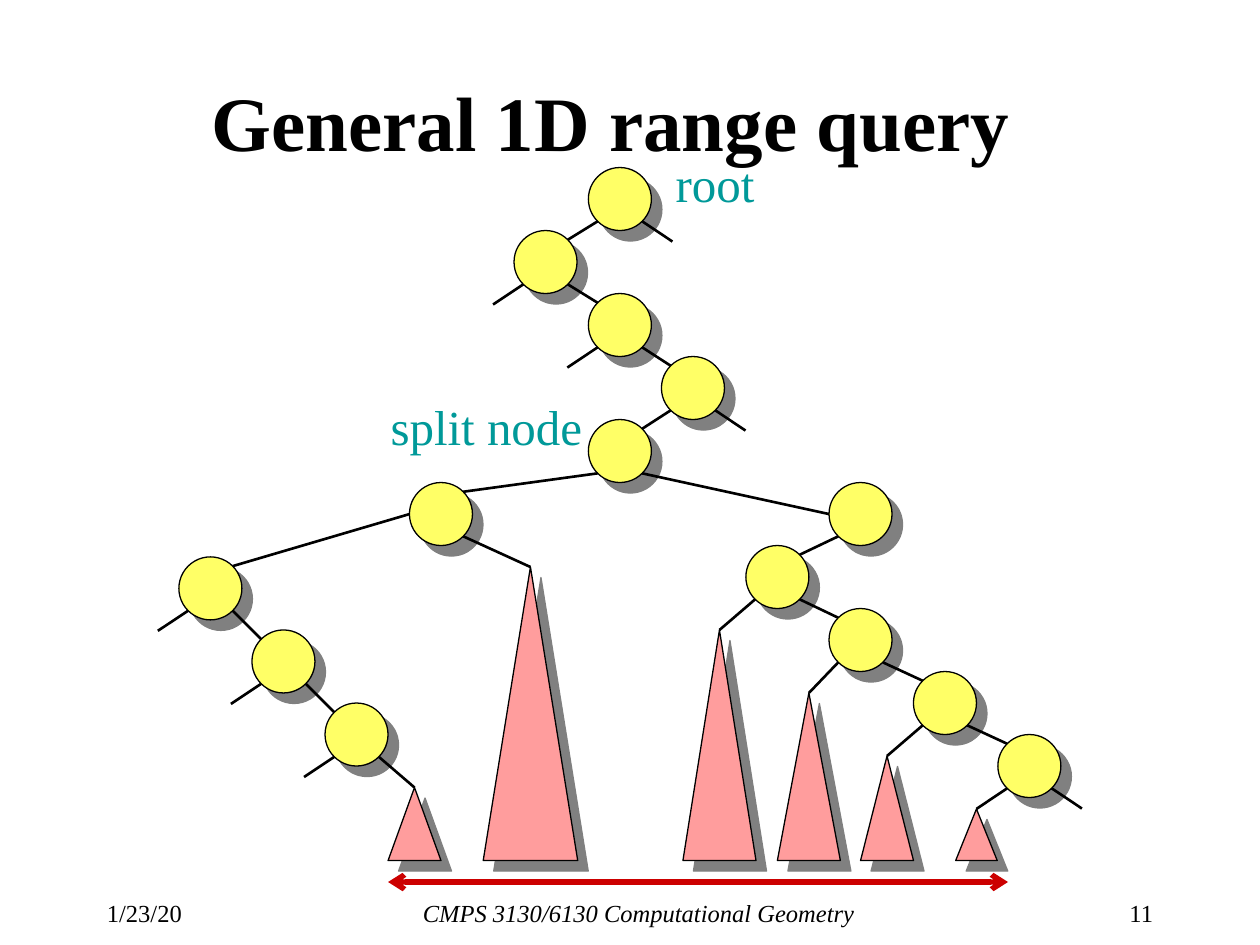
from lxml.etree import SubElement
from pptx import Presentation
from pptx.dml.color import RGBColor
from pptx.enum.shapes import MSO_CONNECTOR, MSO_SHAPE
from pptx.enum.text import MSO_ANCHOR, PP_ALIGN
from pptx.oxml.ns import qn
from pptx.util import Inches, Pt

BLACK = RGBColor(0x00, 0x00, 0x00)
GRAY = RGBColor(0x80, 0x80, 0x80)
YELLOW = RGBColor(0xFF, 0xFF, 0x66)
PINK = RGBColor(0xFF, 0x9D, 0x9D)
TEAL = RGBColor(0x00, 0x99, 0x99)
RED = RGBColor(0xCC, 0x00, 0x00)
FONT = "Times New Roman"

DIAMETER = 0.5
DIAGONAL = 0.177
BASELINE = 6.83
SITES = {
    "top left": (-DIAGONAL, -DIAGONAL),
    "top right": (DIAGONAL, -DIAGONAL),
    "bottom left": (-DIAGONAL, DIAGONAL),
    "bottom right": (DIAGONAL, DIAGONAL),
    "left": (-DIAMETER / 2, 0),
}

NODES = {
    "root": (4.92, 1.58),
    "path 1": (4.33, 2.08),
    "path 2": (4.92, 2.58),
    "path 3": (5.5, 3.08),
    "split": (4.92, 3.58),
    "left 1": (3.5, 4.08),
    "left 2": (1.67, 4.67),
    "left 3": (2.25, 5.25),
    "left 4": (2.83, 5.83),
    "right 1": (6.83, 4.08),
    "right 2": (6.17, 4.58),
    "right 3": (6.83, 5.08),
    "right 4": (7.5, 5.58),
    "right 5": (8.17, 6.08),
}
EDGES = [
    ("root", "bottom left", "path 1", "top right"),
    ("path 1", "bottom right", "path 2", "top left"),
    ("path 2", "bottom right", "path 3", "top left"),
    ("path 3", "bottom left", "split", "top right"),
    ("split", "bottom left", "left 1", "top right"),
    ("left 1", "left", "left 2", "top right"),
    ("left 2", "bottom right", "left 3", "top left"),
    ("left 3", "bottom right", "left 4", "top left"),
    ("split", "bottom right", "right 1", "left"),
    ("right 1", "bottom left", "right 2", "top right"),
    ("right 2", "bottom right", "right 3", "top left"),
    ("right 3", "bottom right", "right 4", "top left"),
    ("right 4", "bottom right", "right 5", "top left"),
]
SUBTREES = [
    ("left 1", "bottom right", 4.21, 4.5, 0.75),
    ("left 4", "bottom right", 3.29, 6.25, 0.42),
    ("right 2", "bottom left", 5.71, 5, 0.58),
    ("right 3", "bottom left", 6.42, 5.5, 0.5),
    ("right 4", "bottom left", 7.04, 6, 0.42),
    ("right 5", "bottom left", 7.75, 6.42, 0.33),
]
STUBS = [
    ("root", "bottom right"),
    ("path 1", "bottom left"),
    ("path 2", "bottom left"),
    ("path 3", "bottom right"),
    ("left 2", "bottom left"),
    ("left 3", "bottom left"),
    ("left 4", "bottom left"),
    ("right 5", "bottom right"),
]
LABELS = [
    ("root", 5.26, 1.17, 0.83, 0.57, 28, TEAL, PP_ALIGN.CENTER, False),
    ("split node", 3, 3.1, 1.72, 0.57, 28, TEAL, PP_ALIGN.CENTER, False),
    ("1/23/20", 0.75, 7.08, 0.95, 0.25, 14, BLACK, PP_ALIGN.LEFT, False),
    ("CMPS 3130/6130 Computational Geometry", 1.9, 7.08, 6.34, 0.25, 14, BLACK,
     PP_ALIGN.CENTER, True),
    ("11", 8.43, 7.08, 0.82, 0.25, 14, BLACK, PP_ALIGN.RIGHT, False),
]

presentation = Presentation()
presentation.slide_width = Inches(10)
presentation.slide_height = Inches(7.5)
slide = presentation.slides.add_slide(presentation.slide_layouts[5])


def add_solid(kind, left, top, width, height, color):
    shape = slide.shapes.add_shape(
        kind, Inches(left), Inches(top), Inches(width), Inches(height))
    shape.fill.solid()
    shape.fill.fore_color.rgb = color
    shape.line.color.rgb = BLACK
    shape.line.width = Pt(0.75)
    effects = SubElement(shape._element.spPr, qn("a:effectLst"))
    shadow = SubElement(effects, qn("a:outerShdw"), dist=str(Pt(8.5)),
                        dir="2700000", algn="ctr", rotWithShape="0")
    SubElement(shadow, qn("a:srgbClr"), val=str(GRAY))


def add_line(start, end, color=BLACK, width=1.5):
    line = slide.shapes.add_connector(
        MSO_CONNECTOR.STRAIGHT, *(Inches(value) for value in (*start, *end)))
    line.line.color.rgb = color
    line.line.width = Pt(width)
    SubElement(line._element.spPr, qn("a:effectLst"))
    return line


title = slide.shapes.title
title.left, title.top = Inches(1.58), Inches(0.33)
title.width, title.height = Inches(8.25), Inches(1.25)
title.text_frame.text = "General 1D range query"
title.text_frame.vertical_anchor = MSO_ANCHOR.MIDDLE
paragraph = title.text_frame.paragraphs[0]
paragraph.alignment = PP_ALIGN.LEFT
paragraph.font.name = FONT
paragraph.font.size = Pt(44)
paragraph.font.bold = True
paragraph.font.color.rgb = BLACK

anchors = {}
for name, (x, y) in NODES.items():
    add_solid(MSO_SHAPE.OVAL, x - DIAMETER / 2, y - DIAMETER / 2,
              DIAMETER, DIAMETER, YELLOW)
    for site, (dx, dy) in SITES.items():
        anchors[name, site] = (x + dx, y + dy)

for parent, parent_site, child, child_site in EDGES:
    add_line(anchors[parent, parent_site], anchors[child, child_site])

for node, site, x, y, width in SUBTREES:
    add_solid(MSO_SHAPE.ISOSCELES_TRIANGLE, x - width / 2, y,
              width, BASELINE - y, PINK)
    add_line(anchors[node, site], (x, y))

for node, site in STUBS:
    x, y = anchors[node, site]
    reach = 0.24 if site == "bottom right" else -0.24
    add_line((x, y), (x + reach, y + 0.16))

range_arrow = add_line((3.08, 7), (8, 7), RED, 3)
outline = range_arrow.line._get_or_add_ln()
for end in ("a:headEnd", "a:tailEnd"):
    SubElement(outline, qn(end), type="arrow")

for text, left, top, width, height, size, color, alignment, italic in LABELS:
    label = slide.shapes.add_textbox(
        Inches(left), Inches(top), Inches(width), Inches(height))
    label.text_frame.word_wrap = size == 14
    label.text_frame.text = text
    paragraph = label.text_frame.paragraphs[0]
    paragraph.alignment = alignment
    paragraph.font.name = FONT
    paragraph.font.size = Pt(size)
    paragraph.font.italic = italic
    paragraph.font.color.rgb = color

presentation.save("out.pptx")
